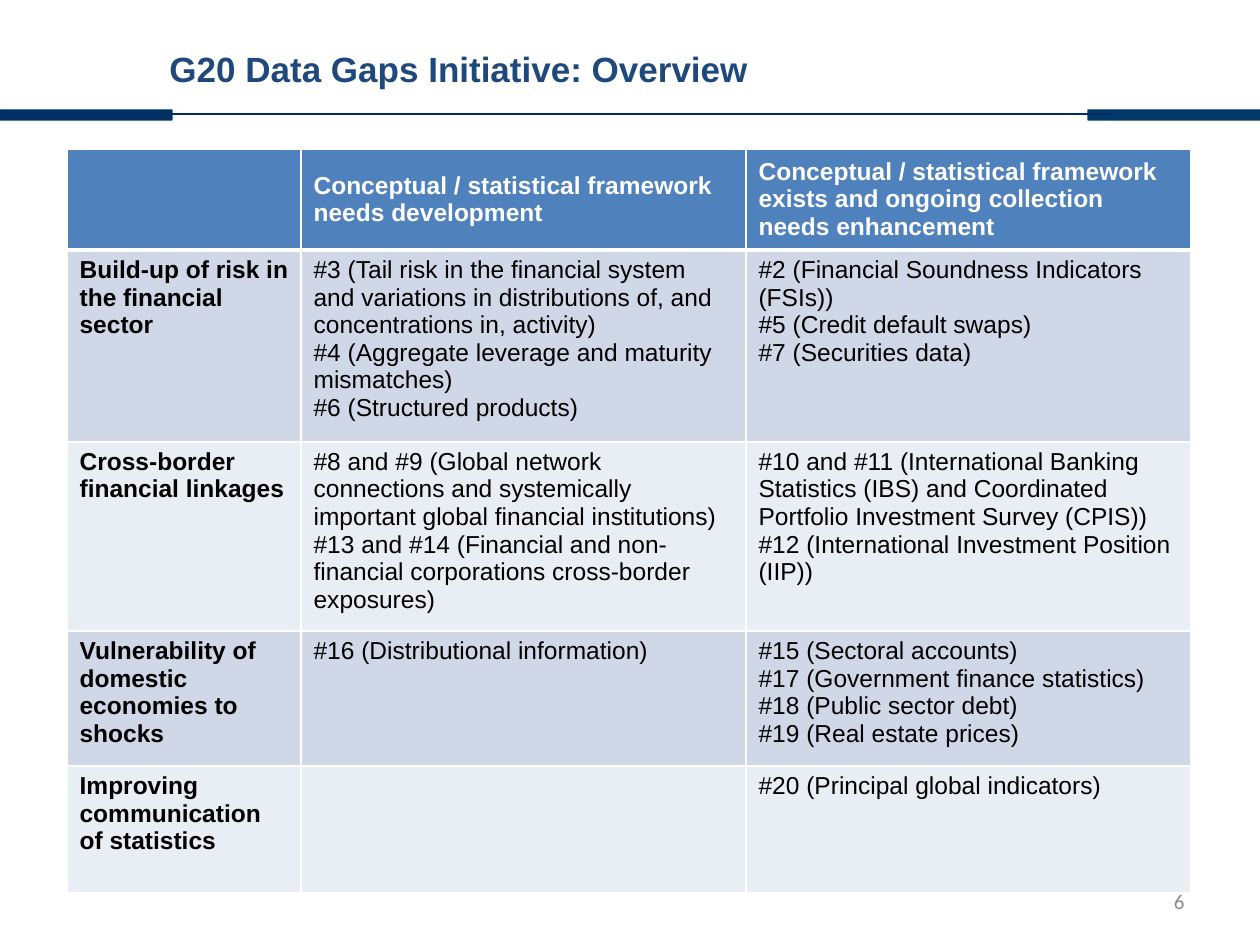
from lxml import etree
from pptx import Presentation
from pptx.dml.color import RGBColor
from pptx.enum.shapes import MSO_CONNECTOR, MSO_SHAPE
from pptx.enum.text import MSO_ANCHOR, PP_ALIGN
from pptx.oxml.ns import qn
from pptx.util import Pt

STRAIGHT = MSO_CONNECTOR.STRAIGHT
ROUNDED = MSO_SHAPE.ROUNDED_RECTANGLE
TOP, MIDDLE = MSO_ANCHOR.TOP, MSO_ANCHOR.MIDDLE
LEFT, RIGHT = PP_ALIGN.LEFT, PP_ALIGN.RIGHT

EMU_PER_PX = 914400 / 126
NAVY, DEEP_NAVY = "002F63", "003867"
HEADER_FILL, BANDS = "4F81BD", ("D0D8E8", "E9EDF4")

COLUMN_WIDTHS = (234, 445, 445)
ROW_HEIGHTS = (100, 192, 189, 135, 127)
RECOMMENDATIONS = (
    ("",
     "Conceptual / statistical framework needs development",
     "Conceptual / statistical framework exists and ongoing collection needs enhancement"),
    ("Build-up of risk in the financial sector",
     "#3 (Tail risk in the financial system and variations in distributions of, "
     "and concentrations in, activity)\n"
     "#4 (Aggregate leverage and maturity mismatches)\n"
     "#6 (Structured products)",
     "#2 (Financial Soundness Indicators (FSIs))\n"
     "#5 (Credit default swaps)\n"
     "#7 (Securities data)"),
    ("Cross-border financial linkages",
     "#8 and #9 (Global network connections and systemically important global "
     "financial institutions)\n"
     "#13 and #14 (Financial and non-financial corporations cross-border exposures)",
     "#10 and #11 (International Banking Statistics (IBS) and Coordinated "
     "Portfolio Investment Survey (CPIS))\n"
     "#12 (International Investment Position (IIP))"),
    ("Vulnerability of domestic economies to shocks",
     "#16 (Distributional information)",
     "#15 (Sectoral accounts)\n"
     "#17 (Government finance statistics)\n"
     "#18 (Public sector debt)\n"
     "#19 (Real estate prices)"),
    ("Improving communication of statistics",
     "",
     "#20 (Principal global indicators)"),
)


def px(length):
    return round(length * EMU_PER_PX)


def box(*lengths):
    return [px(length) for length in lengths]


def color(hex_string):
    return RGBColor.from_string(hex_string)


def write(frame, text, size=14, font="Arial", ink="000000", bold=False, align=LEFT):
    for index, line in enumerate(text.split("\n")):
        paragraph = frame.paragraphs[0] if index == 0 else frame.add_paragraph()
        paragraph.alignment = align
        paragraph.font.size = Pt(size)
        if not line:
            continue
        run = paragraph.add_run()
        run.text = line
        run.font.size = Pt(size)
        run.font.name = font
        run.font.bold = bold
        run.font.color.rgb = color(ink)


def add_text(slide, bounds, text, anchor=TOP, **text_format):
    frame = slide.shapes.add_textbox(*box(*bounds)).text_frame
    frame.word_wrap = True
    frame.vertical_anchor = anchor
    write(frame, text, **text_format)


def add_bar(slide, left, fill):
    bar = slide.shapes.add_shape(ROUNDED, *box(left, 110, 172, 10))
    bar.adjustments[0] = 0.02
    bar.shadow.inherit = False
    bar.fill.solid()
    bar.fill.fore_color.rgb = color(fill)
    bar.line.color.rgb = color(DEEP_NAVY)
    bar.line.width = Pt(0.75)


def add_rule(slide, start, end, y):
    rule = slide.shapes.add_connector(STRAIGHT, *box(start, y, end, y))
    rule.line.color.rgb = color(NAVY)
    rule.line.width = Pt(0.75)
    etree.SubElement(rule._element.spPr, qn("a:effectLst"))


def set_borders(cell, top, bottom):
    properties = cell._tc.get_or_add_tcPr()
    widths = {"lnL": 1, "lnR": 1, "lnT": top, "lnB": bottom}
    for index, (side, width) in enumerate(widths.items()):
        border = etree.Element(qn(f"a:{side}"), w=str(Pt(width)))
        fill = etree.SubElement(border, qn("a:solidFill"))
        etree.SubElement(fill, qn("a:srgbClr"), val="FFFFFF")
        properties.insert(index, border)


def add_recommendation_table(slide):
    bounds = box(67, 149, sum(COLUMN_WIDTHS), sum(ROW_HEIGHTS))
    table = slide.shapes.add_table(len(ROW_HEIGHTS), len(COLUMN_WIDTHS), *bounds).table
    for column, width in zip(table.columns, COLUMN_WIDTHS):
        column.width = px(width)
    for row, height in zip(table.rows, ROW_HEIGHTS):
        row.height = px(height)
    for r, texts in enumerate(RECOMMENDATIONS):
        is_header = r == 0
        for c, text in enumerate(texts):
            cell = table.cell(r, c)
            cell.fill.solid()
            cell.fill.fore_color.rgb = color(HEADER_FILL if is_header else BANDS[(r - 1) % 2])
            cell.vertical_anchor = MIDDLE if is_header else TOP
            set_borders(cell, top=3 if r == 1 else 1, bottom=3 if is_header else 1)
            write(cell.text_frame, text, bold=is_header or c == 0,
                  ink="FFFFFF" if is_header else "000000")


def main():
    deck = Presentation()
    deck.slide_width, deck.slide_height = box(1260, 945)
    slide = deck.slides.add_slide(deck.slide_layouts[6])
    add_bar(slide, 0, NAVY)
    add_bar(slide, 1088, DEEP_NAVY)
    add_rule(slide, 128, 1112, 114)
    add_text(slide, (903, 876, 294, 50), "6", anchor=MIDDLE,
             size=12, font="Calibri", ink="8C8C8C", align=RIGHT)
    add_text(slide, (157, 41, 1079, 55), "G20 Data Gaps Initiative: Overview",
             size=20, ink="1F497D", bold=True)
    add_recommendation_table(slide)
    deck.save("out.pptx")


if __name__ == "__main__":
    main()
